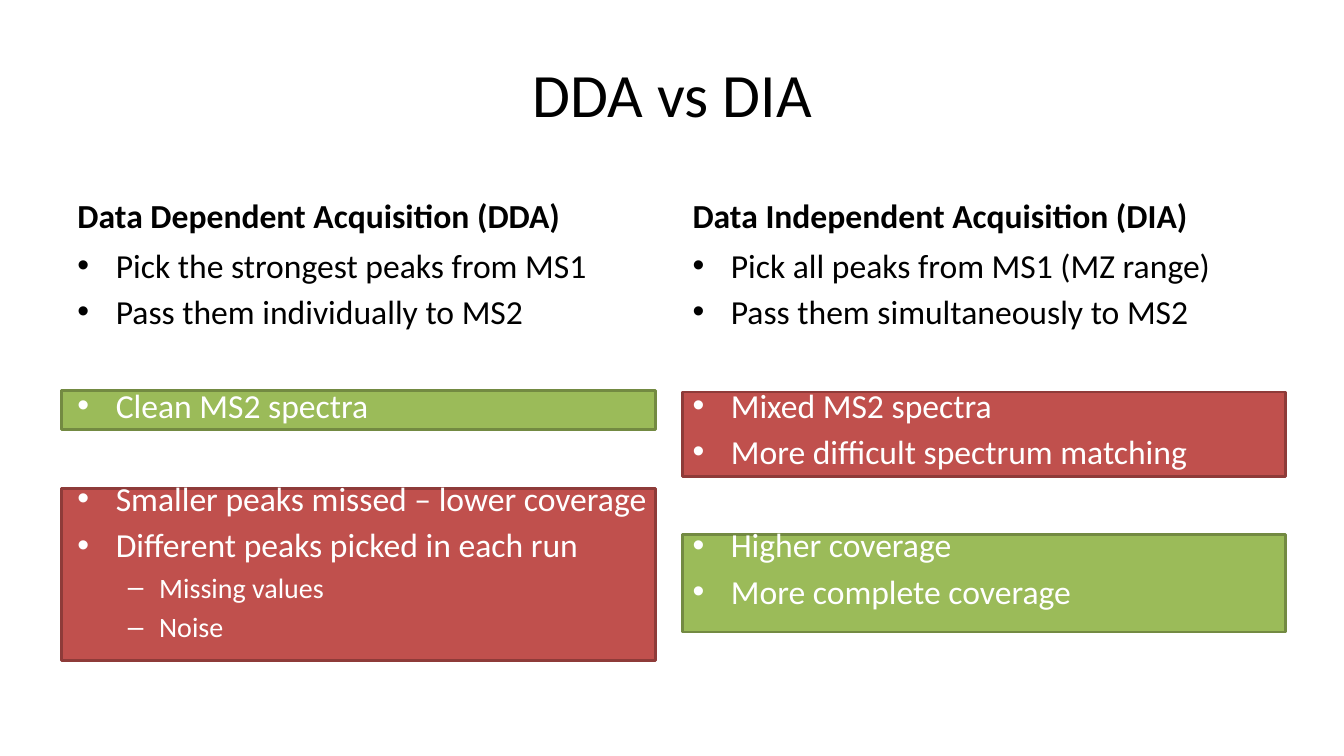
from pptx import Presentation
from pptx.dml.color import RGBColor
from pptx.enum.shapes import MSO_SHAPE
from pptx.enum.text import MSO_ANCHOR, PP_ALIGN
from pptx.oxml.ns import qn
from pptx.util import Inches, Pt
from lxml.etree import SubElement

FONT = "Calibri"
BLACK = RGBColor(0x00, 0x00, 0x00)
WHITE = RGBColor(0xFF, 0xFF, 0xFF)
GREEN = RGBColor(0x9B, 0xBB, 0x59)
GREEN_EDGE = RGBColor(0x73, 0x8A, 0x42)
RED = RGBColor(0xC0, 0x50, 0x4D)
RED_EDGE = RGBColor(0x8E, 0x3B, 0x39)

LEFT_COLUMN, RIGHT_COLUMN, COLUMN_WIDTH = 0.67, 6.77, 5.89
GROUP_GAP = 33.6  # points: one full line between groups

# Per level: size, space before (points), bullet, text indent, bullet hang (inches)
LEVELS = [
    (24, 4.3, "•", 0.38, 0.38),
    (20, 4.1, "–", 0.81, 0.31),
]

# Each group: text colour and its (level, text) points
DDA_GROUPS = [
    (BLACK, [(0, "Pick the strongest peaks from MS1"),
             (0, "Pass them individually to MS2")]),
    (WHITE, [(0, "Clean MS2 spectra")]),
    (WHITE, [(0, "Smaller peaks missed – lower coverage"),
             (0, "Different peaks picked in each run"),
             (1, "Missing values"),
             (1, "Noise")]),
]
DIA_GROUPS = [
    (BLACK, [(0, "Pick all peaks from MS1 (MZ range)"),
             (0, "Pass them simultaneously to MS2")]),
    (WHITE, [(0, "Mixed MS2 spectra"),
             (0, "More difficult spectrum matching")]),
    (WHITE, [(0, "Higher coverage"),
             (0, "More complete coverage")]),
]

# Left, top, width, height, fill, edge
PANELS = [
    (0.61, 4.85, 5.89, 1.7, RED, RED_EDGE),
    (0.61, 3.87, 5.89, 0.39, GREEN, GREEN_EDGE),
    (6.77, 5.3, 5.98, 0.97, GREEN, GREEN_EDGE),
    (6.77, 3.89, 5.98, 0.84, RED, RED_EDGE),
]


def add_span(para, text, size, color, bold=False):
    span = para.add_run()
    span.text = text
    span.font.name = FONT
    span.font.size = Pt(size)
    span.font.bold = bold
    span.font.color.rgb = color


def set_bullet(para, char, indent, hang):
    properties = para._p.get_or_add_pPr()
    properties.set("marL", str(Inches(indent)))
    properties.set("indent", str(-Inches(hang)))
    SubElement(properties, qn("a:buFont")).set("typeface", "Arial")
    SubElement(properties, qn("a:buChar")).set("char", char)


def add_panel(page, left, top, width, height, fill, edge):
    panel = page.shapes.add_shape(MSO_SHAPE.RECTANGLE, Inches(left), Inches(top),
                                  Inches(width), Inches(height))
    panel.shadow.inherit = False
    panel.fill.solid()
    panel.fill.fore_color.rgb = fill
    panel.line.color.rgb = edge
    panel.line.width = Pt(2)


def add_text_frame(page, left, top, height, anchor):
    box = page.shapes.add_textbox(Inches(left), Inches(top),
                                  Inches(COLUMN_WIDTH), Inches(height))
    frame = box.text_frame
    frame.word_wrap = True
    frame.vertical_anchor = anchor
    return frame


def add_heading(page, left, text):
    frame = add_text_frame(page, left, 1.68, 0.7, MSO_ANCHOR.BOTTOM)
    add_span(frame.paragraphs[0], text, 24, BLACK, bold=True)


def add_bullet_groups(page, left, groups):
    frame = add_text_frame(page, left, 2.38, 4.32, MSO_ANCHOR.TOP)
    para = frame.paragraphs[0]
    for group_index, (color, points) in enumerate(groups):
        for point_index, (level, text) in enumerate(points):
            starts_group = group_index > 0 and point_index == 0
            if group_index or point_index:
                para = frame.add_paragraph()
            size, before, char, indent, hang = LEVELS[level]
            para.level = level
            para.space_before = Pt(before + (GROUP_GAP if starts_group else 0))
            set_bullet(para, char, indent, hang)
            add_span(para, text, size, color)


def set_title(page, text):
    title = page.shapes.title
    title.left, title.top = Inches(0.67), Inches(0.3)
    title.width, title.height = Inches(12), Inches(1.25)
    title.text_frame.vertical_anchor = MSO_ANCHOR.MIDDLE
    para = title.text_frame.paragraphs[0]
    para.alignment = PP_ALIGN.CENTER
    add_span(para, text, 44, BLACK)


def main():
    deck = Presentation()
    deck.slide_width, deck.slide_height = Inches(13.33), Inches(7.5)
    page = deck.slides.add_slide(deck.slide_layouts.get_by_name("Title Only"))
    set_title(page, "DDA vs DIA")
    for panel in PANELS:
        add_panel(page, *panel)
    for left, heading, groups in [
        (LEFT_COLUMN, "Data Dependent Acquisition (DDA)", DDA_GROUPS),
        (RIGHT_COLUMN, "Data Independent Acquisition (DIA)", DIA_GROUPS),
    ]:
        add_heading(page, left, heading)
        add_bullet_groups(page, left, groups)
    deck.save("out.pptx")


if __name__ == "__main__":
    main()
